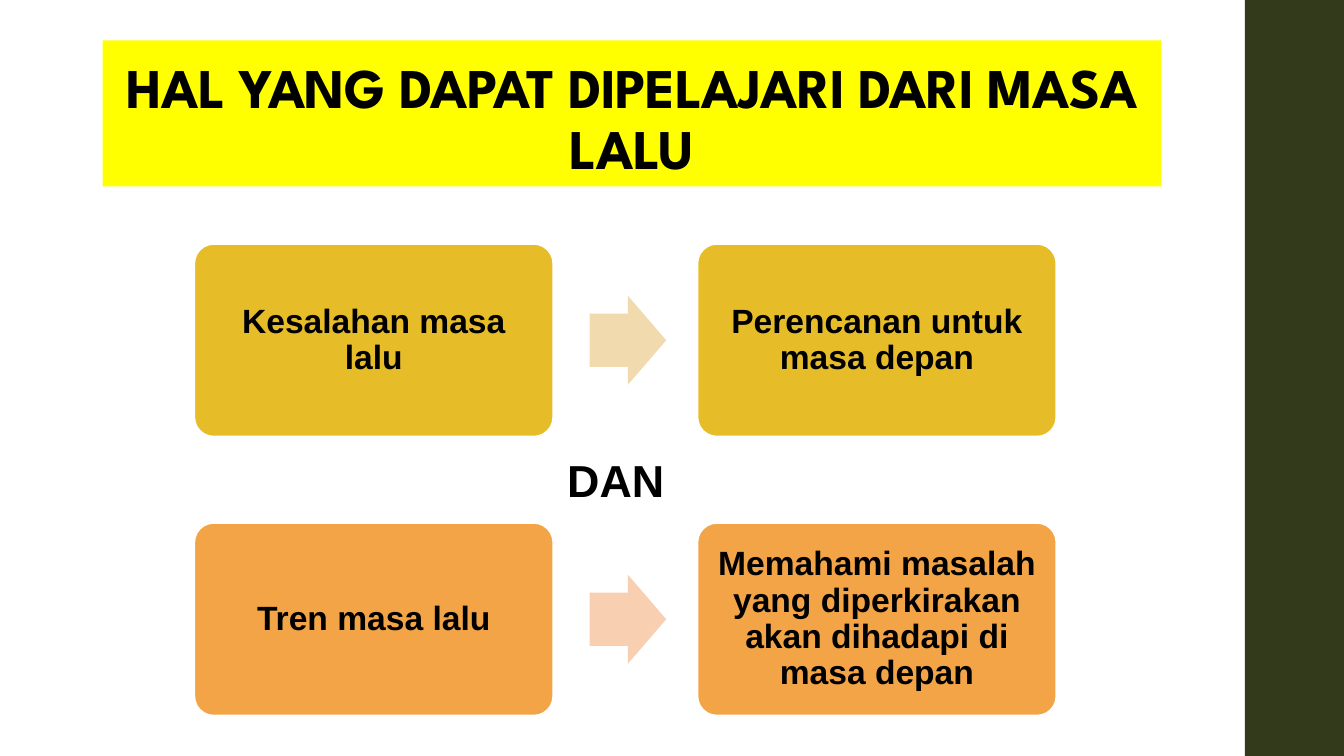
from pptx import Presentation
from pptx.dml.color import RGBColor
from pptx.enum.shapes import MSO_SHAPE
from pptx.enum.text import MSO_ANCHOR, PP_ALIGN
from pptx.util import Cm, Pt

COLORS = {
    "black": "000000",
    "white": "FFFFFF",
    "olive": "333A1C",
    "yellow": "FFFF00",
    "gold": "E7BC29",
    "sand": "F1DAAD",
    "orange": "F3A447",
    "peach": "F8CFB1",
}
LEFT, RIGHT = 4.9, 17.58
CARD_W, CARD_H = 9.04, 4.85
ARROW_X, ARROW_W, ARROW_H = 14.86, 1.93, 2.24
ROWS = [
    (6.15, "gold", "sand", "Kesalahan masa lalu", "Perencanan untuk masa depan"),
    (13.18, "orange", "peach", "Tren masa lalu",
     "Memahami masalah yang diperkirakan akan dihadapi di masa depan"),
]


def color(name):
    return RGBColor.from_string(COLORS[name])


def add_form(slide, kind, box, fill):
    form = slide.shapes.add_shape(kind, *map(Cm, box))
    form.shadow.inherit = False
    form.fill.solid()
    form.fill.fore_color.rgb = color(fill)
    form.line.fill.background()
    return form


def set_text(shape, text, size, font="Arial", anchor=MSO_ANCHOR.MIDDLE, space=0.9):
    frame = shape.text_frame
    frame.text = text
    frame.word_wrap = True
    frame.vertical_anchor = anchor
    line = frame.paragraphs[0]
    line.alignment = PP_ALIGN.CENTER
    line.line_spacing = space
    run = line.runs[0]
    run.font.name = font
    run.font.size = Pt(size)
    run.font.bold = True
    run.font.color.rgb = color("black")
    return run


def add_title(slide, text):
    title = add_form(slide, MSO_SHAPE.RECTANGLE, (2.59, 1.02, 26.67, 3.68), "yellow")
    run = set_text(title, text, 40, "League Spartan", MSO_ANCHOR.BOTTOM)
    run.font._element.set("spc", "-50")


def add_card(slide, left, top, fill, text):
    card = add_form(slide, MSO_SHAPE.ROUNDED_RECTANGLE, (left, top, CARD_W, CARD_H), fill)
    card.adjustments[0] = 0.1
    card.line.color.rgb = color("white")
    card.line.width = Pt(1.1)
    set_text(card, text, 24)
    frame = card.text_frame
    frame.margin_left = frame.margin_right = Cm(0.25)
    frame.margin_top = frame.margin_bottom = Cm(0.25)


def add_arrow(slide, top, fill):
    mid = top + (CARD_H - ARROW_H) / 2
    arrow = add_form(slide, MSO_SHAPE.RIGHT_ARROW, (ARROW_X, mid, ARROW_W, ARROW_H), fill)
    arrow.adjustments[0] = 0.6
    arrow.adjustments[1] = 0.5


def add_label(slide, text):
    label = slide.shapes.add_textbox(Cm(12.8), Cm(11.28), Cm(5.44), Cm(1.63))
    set_text(label, text, 32, anchor=MSO_ANCHOR.TOP, space=1.0)


def main():
    deck = Presentation()
    deck.slide_width, deck.slide_height = Cm(33.87), Cm(19.05)
    slide = deck.slides.add_slide(deck.slide_layouts[6])
    add_form(slide, MSO_SHAPE.RECTANGLE, (31.37, 0, 2.5, 19.05), "olive")
    add_title(slide, "HAL YANG DAPAT DIPELAJARI DARI MASA LALU")
    for top, fill, tint, cause, result in ROWS:
        add_card(slide, LEFT, top, fill, cause)
        add_arrow(slide, top, tint)
        add_card(slide, RIGHT, top, fill, result)
    add_label(slide, "DAN")
    deck.save("out.pptx")


if __name__ == "__main__":
    main()
